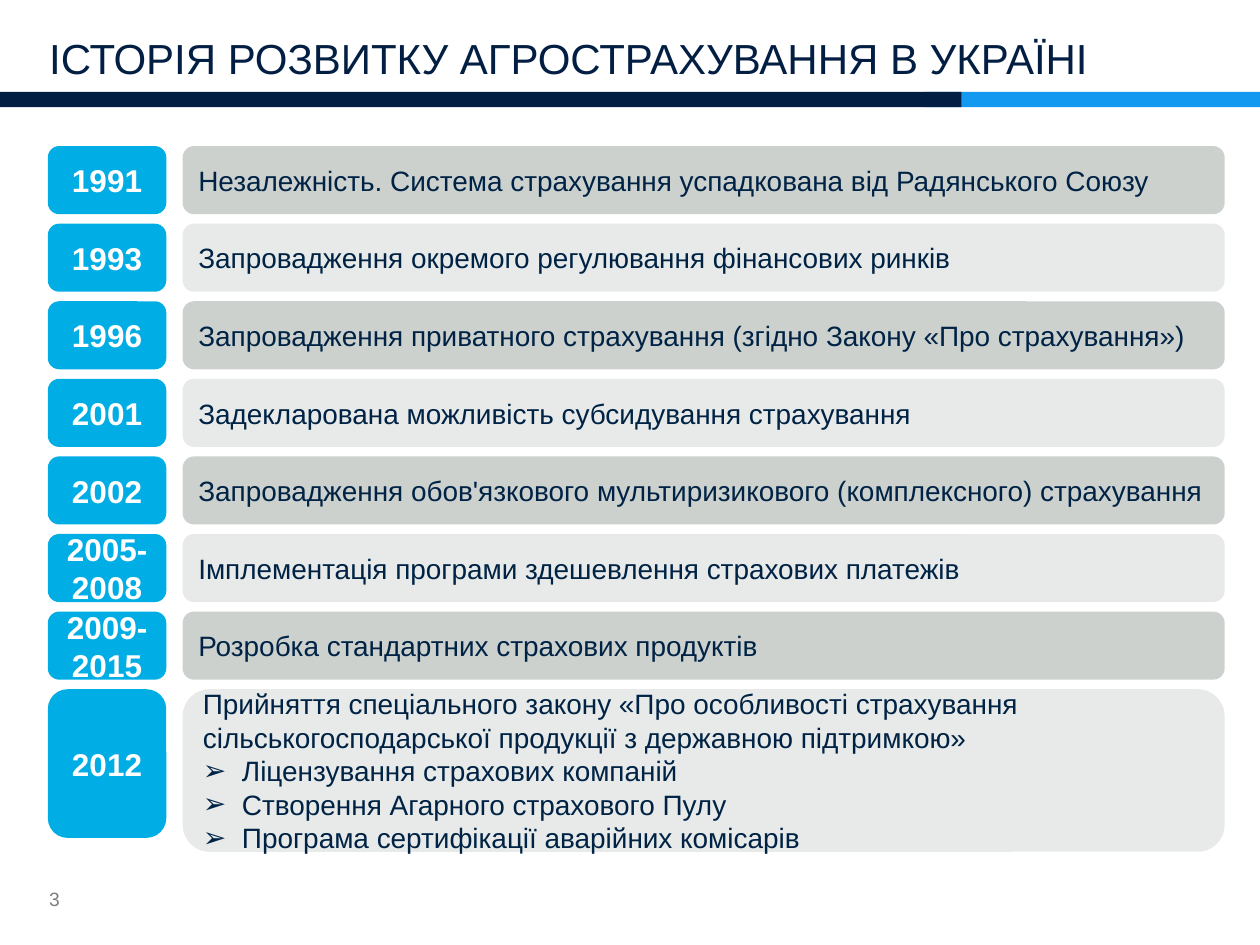
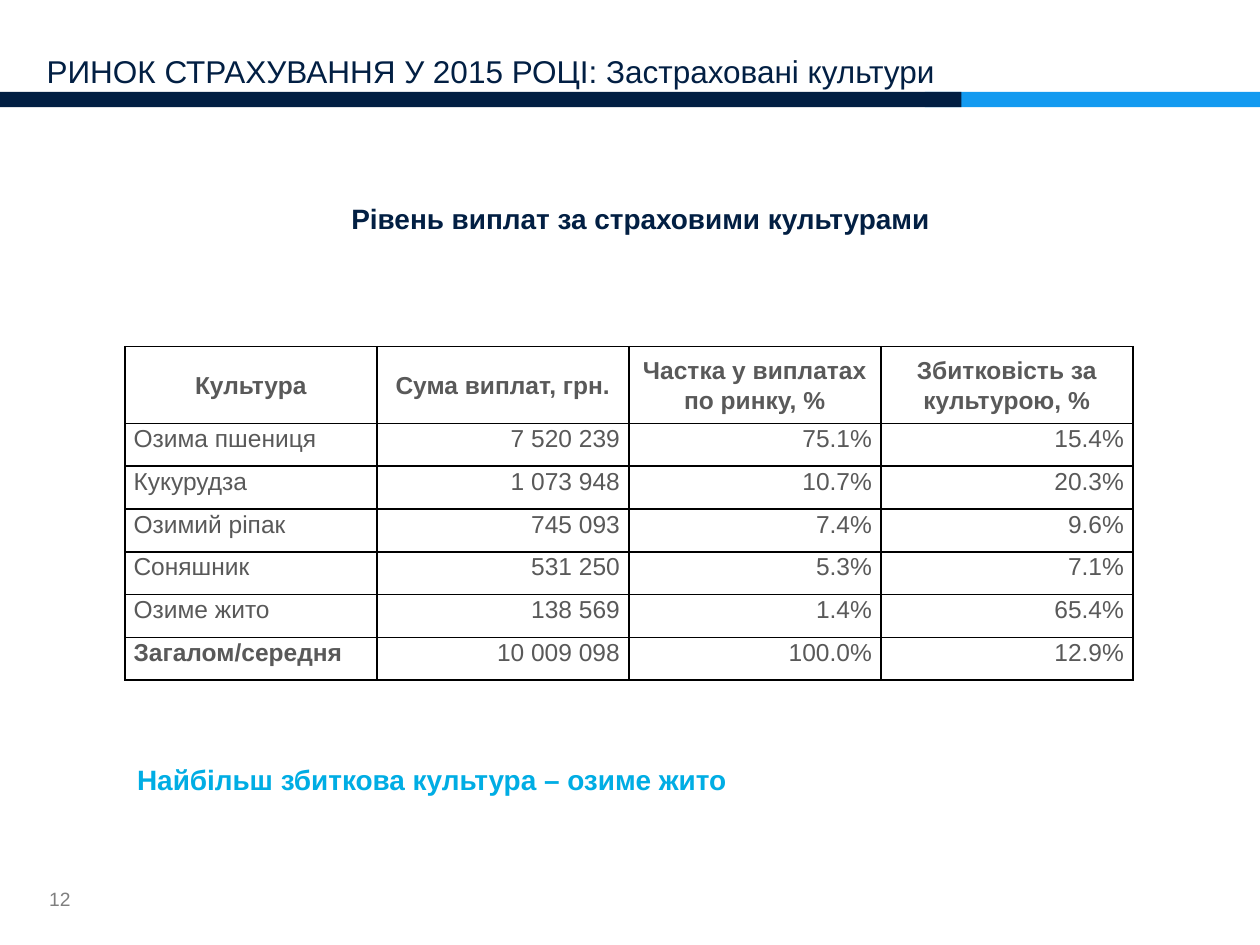
from dataclasses import dataclass

from lxml import etree
from pptx import Presentation
from pptx.dml.color import RGBColor
from pptx.enum.shapes import MSO_SHAPE
from pptx.enum.text import MSO_ANCHOR, MSO_AUTO_SIZE, PP_ALIGN
from pptx.oxml.ns import qn
from pptx.util import Inches, Pt

RECTANGLE, ROUNDED = MSO_SHAPE.RECTANGLE, MSO_SHAPE.ROUNDED_RECTANGLE
LEFT, CENTER, RIGHT, JUSTIFY = PP_ALIGN.LEFT, PP_ALIGN.CENTER, PP_ALIGN.RIGHT, PP_ALIGN.JUSTIFY
TOP, MIDDLE, BOTTOM = MSO_ANCHOR.TOP, MSO_ANCHOR.MIDDLE, MSO_ANCHOR.BOTTOM
NO_AUTOFIT, GROW = MSO_AUTO_SIZE.NONE, MSO_AUTO_SIZE.SHAPE_TO_FIT_TEXT

NAVY = RGBColor(0x02, 0x1F, 0x43)
INK = RGBColor(0x00, 0x23, 0x45)
BLUE = RGBColor(0x13, 0x9A, 0xF0)
CYAN = RGBColor(0x00, 0xAD, 0xE4)
DARK_PANEL = RGBColor(0xCC, 0xD1, 0xCE)
LIGHT_PANEL = RGBColor(0xE7, 0xEA, 0xE8)
PAGE_GRAY = RGBColor(0x7F, 0x7F, 0x7F)
TABLE_GRAY = RGBColor(0x59, 0x59, 0x59)
WHITE = RGBColor(0xFF, 0xFF, 0xFF)

FONT = "Arial"
TITLE_ONLY_LAYOUT = 5


@dataclass(frozen=True)
class Box:
    left: float
    top: float
    width: float
    height: float

    def lengths(self) -> tuple:
        return tuple(Inches(value) for value in (self.left, self.top, self.width, self.height))


@dataclass(frozen=True)
class TextStyle:
    size: int
    color: RGBColor
    bold: bool = False
    align: PP_ALIGN = LEFT


@dataclass(frozen=True)
class Milestone:
    years: str
    event: str
    points: tuple = ()
    year_height: float = 0.54
    event_height: float = 0.54


BANDS = ((Box(7.34, 0.73, 2.66, 0.12), BLUE), (Box(0, 0.73, 7.63, 0.12), NAVY))
PAGE_NUMBER_BOX = Box(0.39, 6.94, 0.6, 0.39)

PAGE_STYLE = TextStyle(11, PAGE_GRAY)
YEAR_STYLE = TextStyle(18, WHITE, True, CENTER)
EVENT_STYLE = TextStyle(16, INK)

MILESTONES = (
    Milestone("1991", "Незалежність. Система страхування успадкована від Радянського Союзу"),
    Milestone("1993", "Запровадження окремого регулювання фінансових ринків"),
    Milestone("1996", "Запровадження приватного страхування (згідно Закону «Про страхування»)"),
    Milestone("2001", "Задекларована можливість субсидування страхування"),
    Milestone("2002", "Запровадження обов'язкового мультиризикового (комплексного) страхування"),
    Milestone("2005-2008", "Імплементація програми здешевлення страхових платежів"),
    Milestone("2009-2015", "Розробка стандартних страхових продуктів"),
    Milestone(
        "2012",
        "Прийняття спеціального закону «Про особливості страхування "
        "сільськогосподарської продукції з державною підтримкою»",
        (
            "Ліцензування страхових компаній",
            "Створення Агарного страхового Пулу",
            "Програма сертифікації аварійних комісарів",
        ),
        1.18,
        1.29,
    ),
)
FIRST_ROW_TOP, LAST_ROW_TOP = 1.16, 5.47

PAYOUTS = (
    ("Культура", "Сума виплат, грн.", "Частка у виплатах по ринку, %", "Збитковість за культурою, %"),
    ("Озима пшениця", "7 520 239", "75.1%", "15.4%"),
    ("Кукурудза", "1 073 948", "10.7%", "20.3%"),
    ("Озимий ріпак", "745 093", "7.4%", "9.6%"),
    ("Соняшник", "531 250", "5.3%", "7.1%"),
    ("Озиме жито", "138 569", "1.4%", "65.4%"),
    ("Загалом/середня", "10 009 098", "100.0%", "12.9%"),
)
TABLE_BOX = Box(0.99, 2.75, 8, 2.67)
HEADER_HEIGHT, CROP_HEIGHT = 0.61, 0.34


def format_paragraph(paragraph, style: TextStyle) -> None:
    paragraph.alignment = style.align
    for run in paragraph.runs:
        run.font.name = FONT
        run.font.size = Pt(style.size)
        run.font.bold = style.bold
        run.font.color.rgb = style.color


def clear_margins(text_frame) -> None:
    text_frame.margin_left = text_frame.margin_right = 0
    text_frame.margin_top = text_frame.margin_bottom = 0


def write(text_frame, text: str, style: TextStyle, anchor: MSO_ANCHOR) -> None:
    text_frame.text = text
    text_frame.word_wrap = True
    text_frame.vertical_anchor = anchor
    format_paragraph(text_frame.paragraphs[0], style)


def add_panel(slide, kind: MSO_SHAPE, box: Box, fill: RGBColor):
    shape = slide.shapes.add_shape(kind, *box.lengths())
    shape.shadow.inherit = False
    shape.fill.solid()
    shape.fill.fore_color.rgb = fill
    shape.line.fill.background()
    return shape


def add_text(slide, box: Box, text: str, style: TextStyle, anchor: MSO_ANCHOR = TOP):
    text_frame = slide.shapes.add_textbox(*box.lengths()).text_frame
    write(text_frame, text, style, anchor)
    return text_frame


def add_titled_slide(presentation, title: str, title_box: Box, title_size: int, page: str):
    slide = presentation.slides.add_slide(presentation.slide_layouts[TITLE_ONLY_LAYOUT])
    for box, color in BANDS:
        add_panel(slide, RECTANGLE, box, color)
    placeholder = slide.shapes.title
    placeholder.left, placeholder.top, placeholder.width, placeholder.height = title_box.lengths()
    write(placeholder.text_frame, title, TextStyle(title_size, NAVY), BOTTOM)
    placeholder.text_frame.auto_size = NO_AUTOFIT
    clear_margins(placeholder.text_frame)
    clear_margins(add_text(slide, PAGE_NUMBER_BOX, page, PAGE_STYLE, MIDDLE))
    return slide


def add_arrow_point(text_frame, text: str) -> None:
    paragraph = text_frame.add_paragraph()
    paragraph.text = text
    properties = paragraph._p.get_or_add_pPr()
    properties.set("marL", str(Inches(0.31)))
    properties.set("indent", str(-Inches(0.31)))
    etree.SubElement(properties, qn("a:buFont"), typeface=FONT)
    etree.SubElement(properties, qn("a:buChar"), char="➢")
    format_paragraph(paragraph, EVENT_STYLE)


def add_milestone(slide, milestone: Milestone, top: float, fill: RGBColor) -> None:
    year_panel = add_panel(slide, ROUNDED, Box(0.38, top, 0.94, milestone.year_height), CYAN)
    write(year_panel.text_frame, milestone.years, YEAR_STYLE, MIDDLE)
    event_panel = add_panel(slide, ROUNDED, Box(1.45, top, 8.27, milestone.event_height), fill)
    write(event_panel.text_frame, milestone.event, EVENT_STYLE, MIDDLE)
    for point in milestone.points:
        add_arrow_point(event_panel.text_frame, point)


def add_borders(cell) -> None:
    properties = cell._tc.get_or_add_tcPr()
    for position, side in enumerate(("a:lnL", "a:lnR", "a:lnT", "a:lnB")):
        line = etree.Element(qn(side), w=str(Pt(1)))
        fill = etree.SubElement(line, qn("a:solidFill"))
        etree.SubElement(fill, qn("a:srgbClr"), val="000000")
        properties.insert(position, line)


def payout_style(row: int, column: int) -> TextStyle:
    is_total_label = row == len(PAYOUTS) - 1 and column == 0
    if row == 0:
        align = CENTER
    elif column > 0:
        align = RIGHT
    else:
        align = LEFT if is_total_label else JUSTIFY
    return TextStyle(14, TABLE_GRAY, row == 0 or is_total_label, align)


def add_payout_table(slide) -> None:
    frame = slide.shapes.add_table(len(PAYOUTS), len(PAYOUTS[0]), *TABLE_BOX.lengths())
    table = frame.table
    table.first_row = table.horz_banding = False
    for row, values in enumerate(PAYOUTS):
        table.rows[row].height = Inches(CROP_HEIGHT if row else HEADER_HEIGHT)
        for column, value in enumerate(values):
            cell = table.cell(row, column)
            cell.text = value
            cell.fill.background()
            cell.vertical_anchor = TOP if row else MIDDLE
            cell.margin_left = cell.margin_right = Inches(0.07)
            cell.margin_top = cell.margin_bottom = 0
            paragraph = cell.text_frame.paragraphs[0]
            paragraph.line_spacing = 1.07
            paragraph.space_after = Pt(8)
            format_paragraph(paragraph, payout_style(row, column))
            add_borders(cell)


def build_history(presentation) -> None:
    slide = add_titled_slide(
        presentation, "ІСТОРІЯ РОЗВИТКУ АГРОСТРАХУВАННЯ В УКРАЇНІ", Box(0.39, 0.3, 9.4, 0.36), 24, "3"
    )
    pitch = (LAST_ROW_TOP - FIRST_ROW_TOP) / (len(MILESTONES) - 1)
    for index, milestone in enumerate(MILESTONES):
        fill = LIGHT_PANEL if index % 2 else DARK_PANEL
        add_milestone(slide, milestone, FIRST_ROW_TOP + index * pitch, fill)


def build_market(presentation) -> None:
    slide = add_titled_slide(
        presentation,
        "РИНОК СТРАХУВАННЯ У 2015 РОЦІ: Застраховані культури",
        Box(0.37, 0.25, 9.52, 0.46),
        18,
        "12",
    )
    add_payout_table(slide)
    captions = (
        (Box(2.69, 1.55, 4.88, 0.37), "Рівень виплат за страховими культурами", NAVY),
        (Box(0.99, 6, 5.17, 0.37), "Найбільш збиткова культура – озиме жито", CYAN),
    )
    for box, text, color in captions:
        add_text(slide, box, text, TextStyle(16, color, True)).auto_size = GROW


def main() -> None:
    presentation = Presentation()
    presentation.slide_width, presentation.slide_height = Inches(10), Inches(7.5)
    build_history(presentation)
    build_market(presentation)
    presentation.save("out.pptx")


if __name__ == "__main__":
    main()
